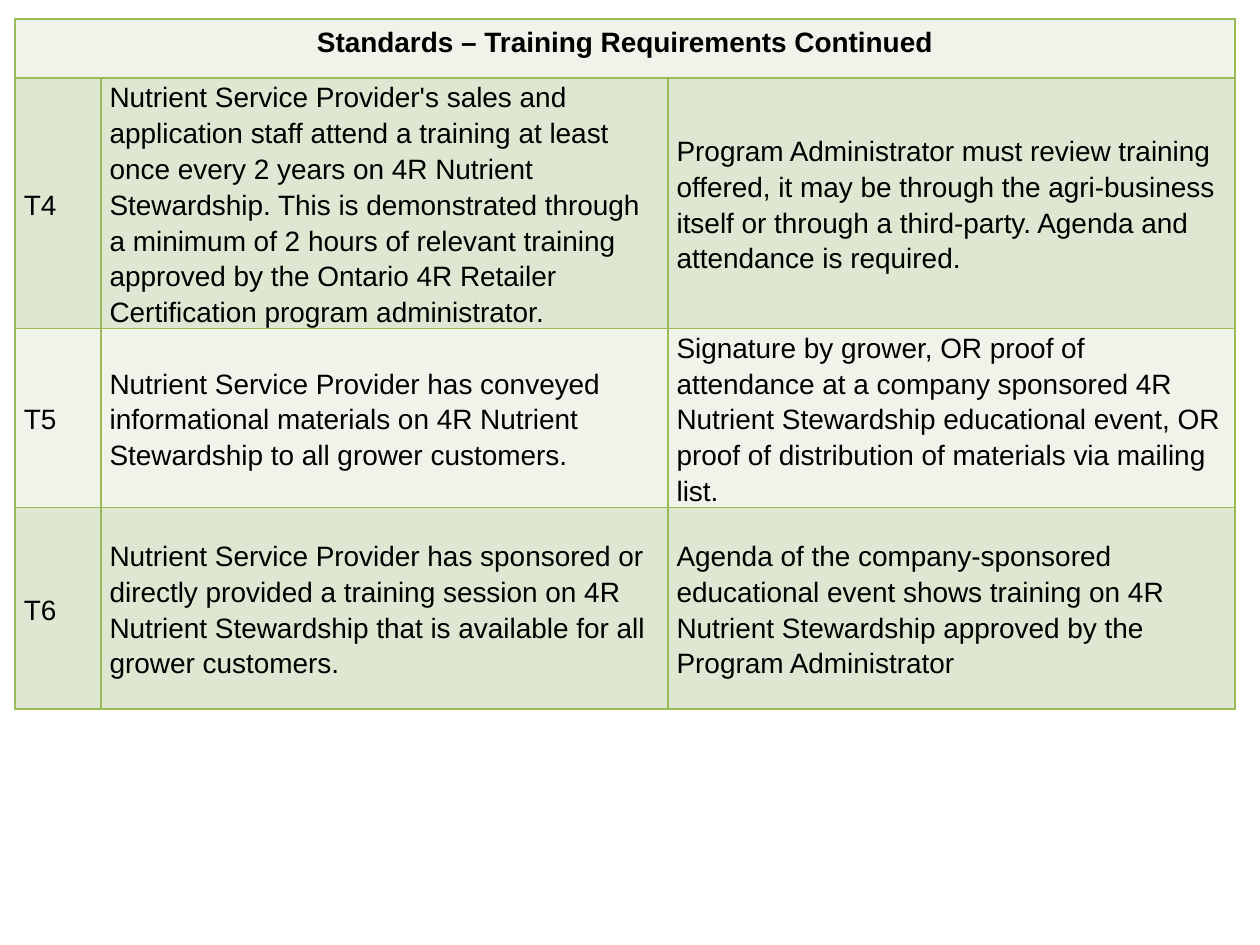
from dataclasses import dataclass

from lxml.etree import SubElement
from pptx import Presentation
from pptx.dml.color import RGBColor
from pptx.enum.text import MSO_ANCHOR as Anchor, PP_ALIGN as Align
from pptx.oxml.ns import qn
from pptx.util import Inches, Pt


@dataclass(frozen=True)
class Theme:
    font: str = "Arial"
    size: int = 16
    text: str = "000000"
    border: str = "9BBB59"
    border_width: int = 1
    bands: tuple = ("EFF3EA", "DEE7D1")


HEADING = "Standards – Training Requirements Continued"
REQUIREMENTS = [
    (
        "T4",
        "Nutrient Service Provider's sales and application staff attend a training "
        "at least once every 2 years on 4R Nutrient Stewardship. This is demonstrated "
        "through a minimum of 2 hours of relevant training approved by the Ontario 4R "
        "Retailer Certification program administrator.",
        "Program Administrator must review training offered, it may be through the "
        "agri-business itself or through a third-party. Agenda and attendance is required.",
    ),
    (
        "T5",
        "Nutrient Service Provider has conveyed informational materials on 4R Nutrient "
        "Stewardship to all grower customers.",
        "Signature by grower, OR proof of attendance at a company sponsored 4R Nutrient "
        "Stewardship educational event, OR proof of distribution of materials via "
        "mailing list.",
    ),
    (
        "T6",
        "Nutrient Service Provider has sponsored or directly provided a training session "
        "on 4R Nutrient Stewardship that is available for all grower customers.",
        "Agenda of the company-sponsored educational event shows training on 4R Nutrient "
        "Stewardship approved by the Program Administrator",
    ),
]
COLUMN_WIDTHS = (0.68, 4.5, 4.5)
ROW_HEIGHTS = (0.47, 1.98, 1.42, 1.6)
HEADING_CELL = {
    "vertical_anchor": Anchor.TOP,
    "margin_left": Inches(0.15),
    "margin_right": Inches(0.15),
    "margin_top": Inches(0.07),
    "margin_bottom": Inches(0.07),
}
BODY_CELL = {
    "vertical_anchor": Anchor.MIDDLE,
    "margin_left": Inches(0.07),
    "margin_right": Inches(0.07),
    "margin_top": 0,
    "margin_bottom": 0,
}
HEADING_PARAGRAPH = {"alignment": Align.CENTER}
BODY_PARAGRAPH = {"alignment": Align.LEFT, "line_spacing": 1.15}


def apply_format(target, values):
    for name, value in values.items():
        setattr(target, name, value)


class SlideBuilder:
    def __init__(self, slide, theme):
        self.slide = slide
        self.theme = theme

    def add_table(self, left, top, widths, heights):
        frame = self.slide.shapes.add_table(
            len(heights), len(widths), Inches(left), Inches(top),
            Inches(sum(widths)), Inches(sum(heights)),
        )
        table = frame.table
        for column, width in zip(table.columns, widths):
            column.width = Inches(width)
        for row, height in zip(table.rows, heights):
            row.height = Inches(height)
        return table

    def style_cell(self, cell, band):
        properties = cell._tc.get_or_add_tcPr()
        for side in ("a:lnL", "a:lnR", "a:lnT", "a:lnB"):
            line = SubElement(properties, qn(side), w=str(Pt(self.theme.border_width)))
            fill = SubElement(line, qn("a:solidFill"))
            SubElement(fill, qn("a:srgbClr"), val=self.theme.border)
        cell.fill.solid()
        cell.fill.fore_color.rgb = RGBColor.from_string(self.theme.bands[band])

    def write_cell(self, cell, text, cell_format, paragraph_format, bold=False):
        apply_format(cell, cell_format)
        paragraph = cell.text_frame.paragraphs[0]
        apply_format(paragraph, paragraph_format)
        run = paragraph.add_run()
        run.text = text
        apply_format(run.font, {
            "name": self.theme.font, "size": Pt(self.theme.size), "bold": bold,
        })
        run.font.color.rgb = RGBColor.from_string(self.theme.text)


def main():
    presentation = Presentation()
    presentation.slide_width = Inches(10)
    presentation.slide_height = Inches(7.5)
    slide = presentation.slides.add_slide(presentation.slide_layouts[6])
    builder = SlideBuilder(slide, Theme())

    table = builder.add_table(0.12, 0.15, COLUMN_WIDTHS, ROW_HEIGHTS)
    for index, row in enumerate(table.rows):
        for cell in row.cells:
            builder.style_cell(cell, index % 2)

    heading = table.cell(0, 0)
    heading.merge(table.cell(0, len(COLUMN_WIDTHS) - 1))
    builder.write_cell(heading, HEADING, HEADING_CELL, HEADING_PARAGRAPH, bold=True)
    for row_index, requirement in enumerate(REQUIREMENTS, start=1):
        for column_index, text in enumerate(requirement):
            cell = table.cell(row_index, column_index)
            builder.write_cell(cell, text, BODY_CELL, BODY_PARAGRAPH)

    presentation.save("out.pptx")


if __name__ == "__main__":
    main()
